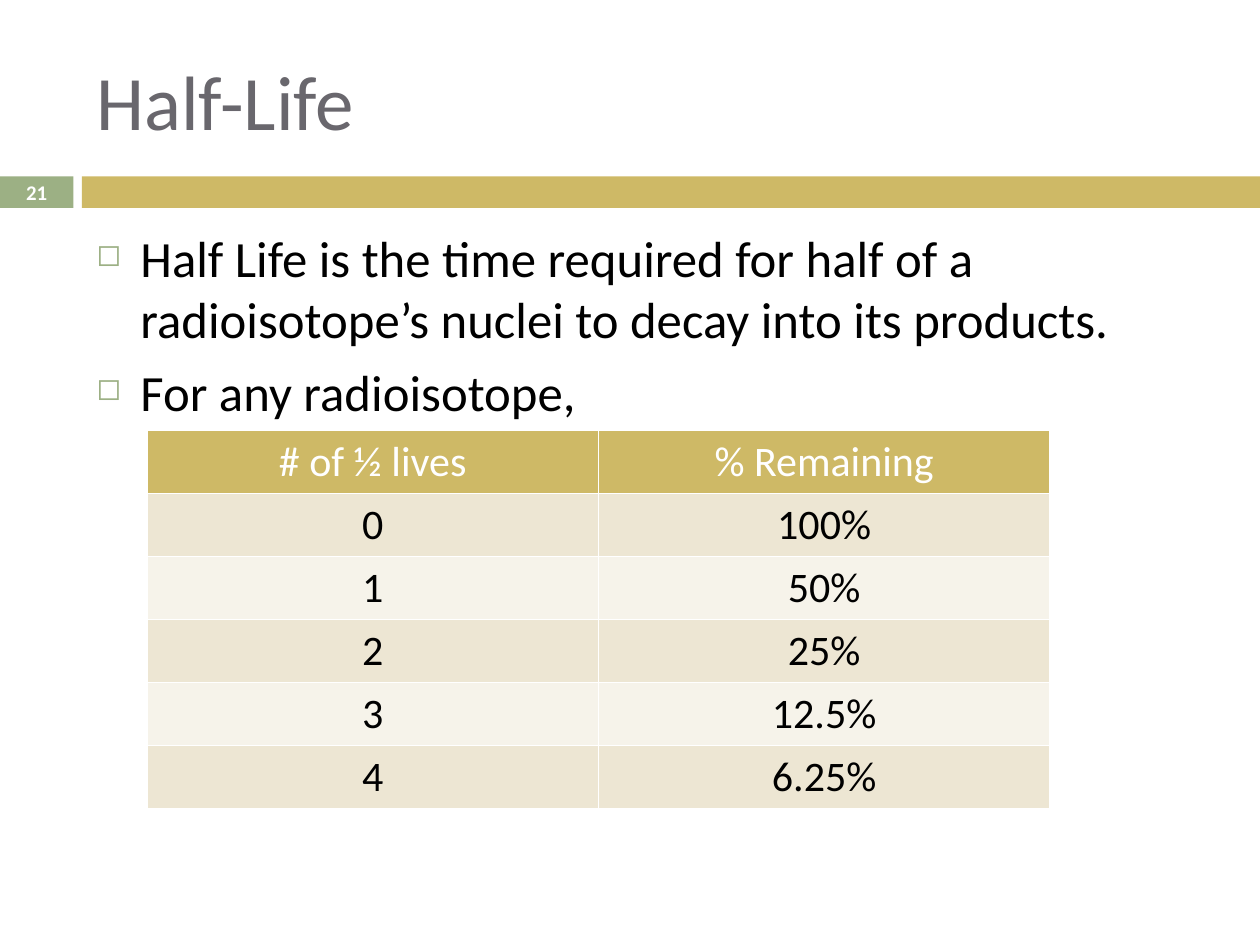
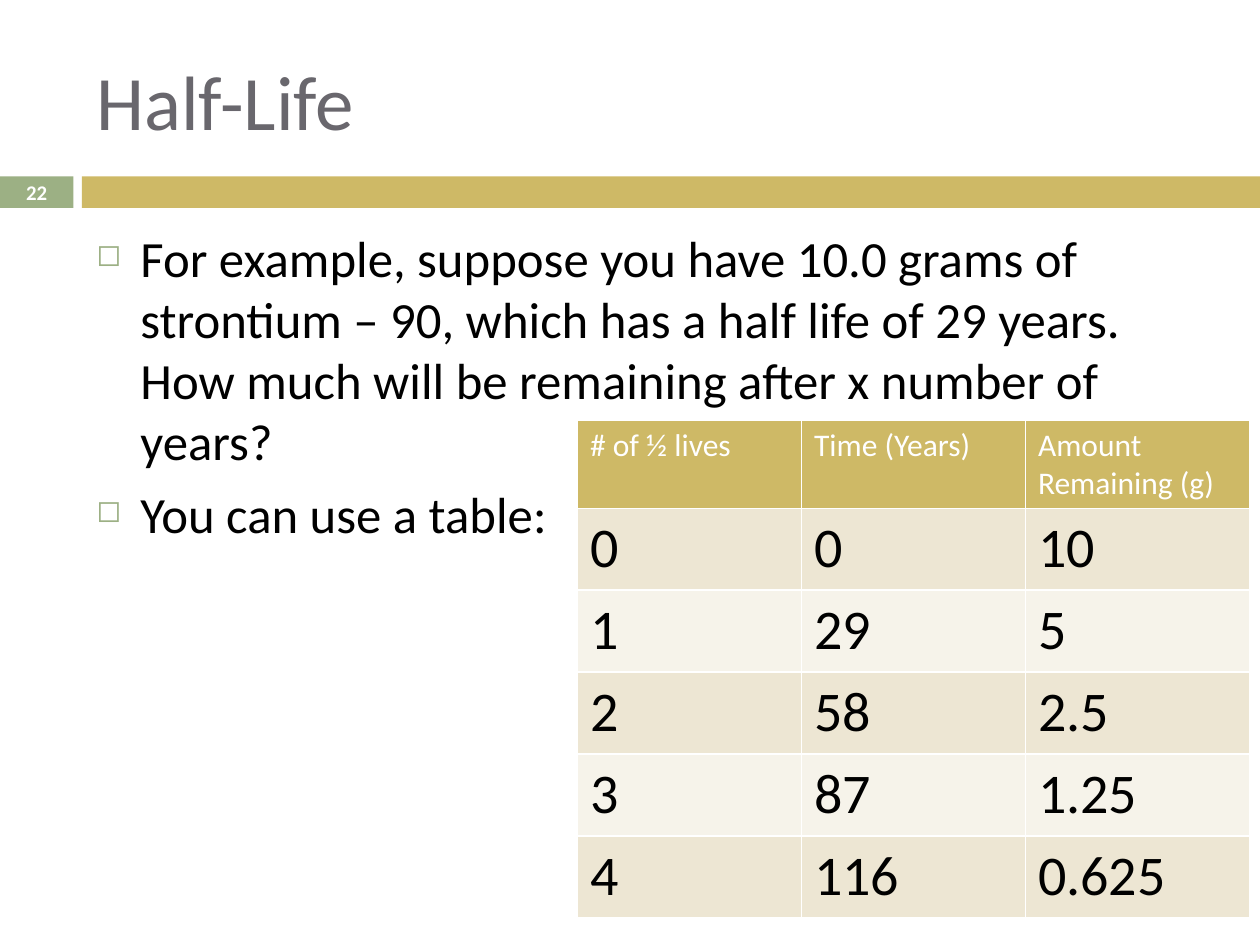
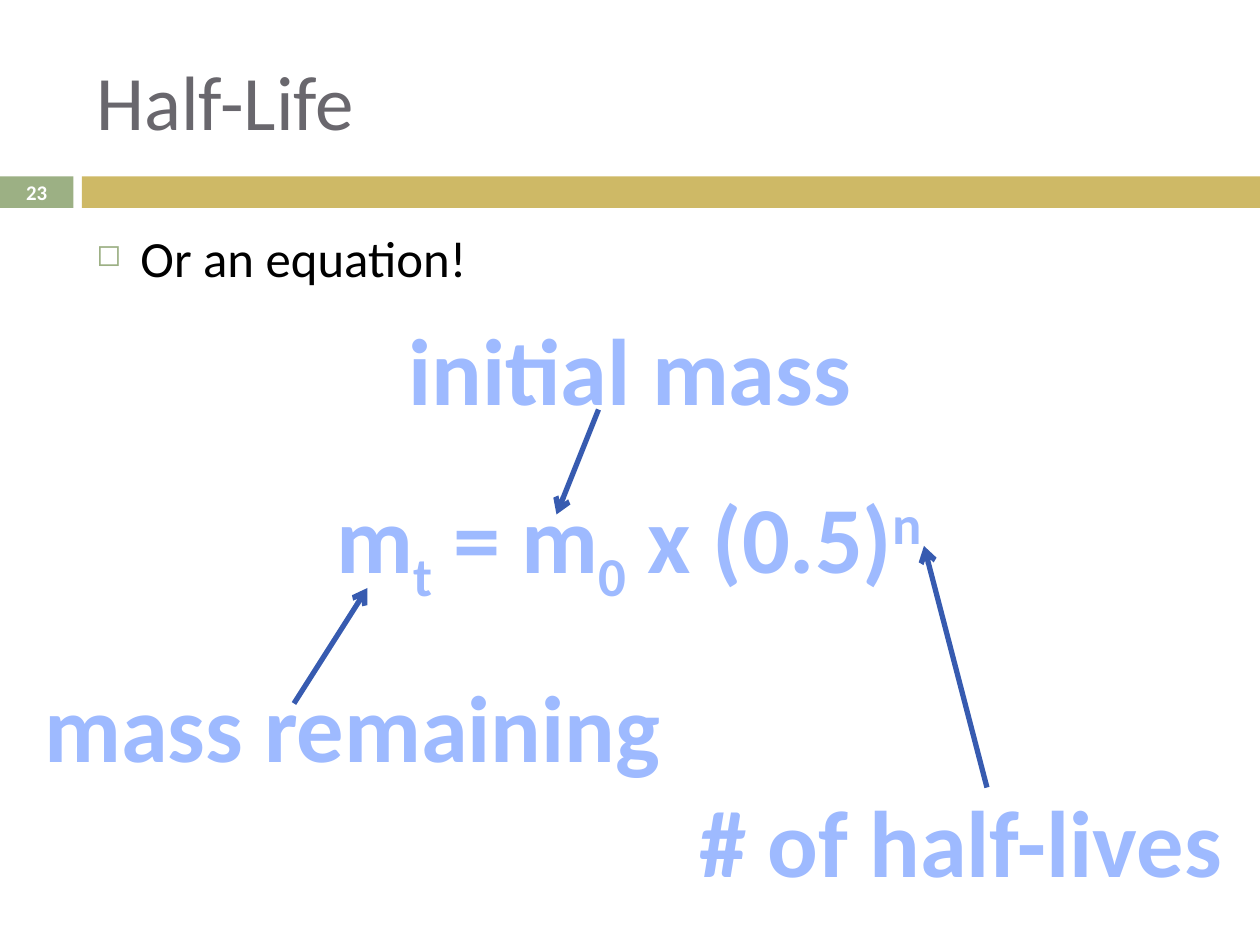
"""Builds three slides on half-life: a rule, a worked table and an equation."""
from dataclasses import dataclass

from lxml.etree import SubElement
from pptx import Presentation
from pptx.dml.color import RGBColor
from pptx.enum.shapes import MSO_CONNECTOR as Conn, MSO_SHAPE as Shape
from pptx.enum.text import MSO_ANCHOR as Anchor, MSO_AUTO_SIZE as Fit, PP_ALIGN as Align
from pptx.oxml.ns import qn
from pptx.util import Pt


@dataclass(frozen=True)
class Theme:
    """Colours, font and type sizes of the deck."""
    font: str = "Calibri"
    white: str = "FFFFFF"
    black: str = "000000"
    title: str = "69676D"
    green: str = "9CB084"
    gold: str = "CEB966"
    bands: tuple = ("EDE6D3", "F6F3EA")
    formula: str = "9EBAFF"
    arrow: str = "375BB0"
    title_size: float = 44
    body_size: float = 29
    formula_size: float = 54
    number_size: float = 11.9


class Deck:
    """Holds the theme and the current slide, and draws each kind of element."""

    def __init__(self, theme):
        """Open an empty 10 by 7.5 inch presentation."""
        self.theme = theme
        self.prs = Presentation()
        self.prs.slide_width, self.prs.slide_height = Pt(720), Pt(540)

    def slide(self, title, number):
        """Start a slide with its bands, title and number."""
        t = self.theme
        self.s = self.prs.slides.add_slide(self.prs.slide_layouts[6])
        self.band(0, 42, t.green)
        self.band(46.8, 673.2, t.gold)
        tf = self.box(48, 18, 642, 78, Anchor.MIDDLE)
        self.run(tf.paragraphs[0], title, t.title_size, t.title)
        tf = self.box(0, 100, 42, 19.5, Anchor.MIDDLE)
        p = tf.paragraphs[0]
        p.alignment = Align.CENTER
        self.run(p, str(number), t.number_size, t.white, bold=True)

    def band(self, x, w, color):
        """Draw one part of the strip under the title."""
        sp = self.s.shapes.add_shape(Shape.RECTANGLE, Pt(x), Pt(100.8), Pt(w), Pt(18))
        sp.shadow.inherit = False
        sp.fill.solid()
        sp.fill.fore_color.rgb = RGBColor.from_string(color)
        sp.line.fill.background()

    def box(self, x, y, w, h, anchor=Anchor.TOP, wrap=True):
        """Add a text box and return its text frame."""
        tf = self.s.shapes.add_textbox(Pt(x), Pt(y), Pt(w), Pt(h)).text_frame
        tf.word_wrap = wrap
        tf.vertical_anchor = anchor
        return tf

    def run(self, p, text, size, color, bold=False, baseline=0):
        """Add a run; baseline is a percentage, negative for subscript."""
        r = p.add_run()
        r.text = text
        f = r.font
        f.name, f.size, f.bold = self.theme.font, Pt(size), bold
        f.color.rgb = RGBColor.from_string(color)
        if baseline:
            r._r.get_or_add_rPr().set("baseline", str(baseline * 1000))

    def bullets(self, *items):
        """Write the body list with hollow square bullets."""
        t = self.theme
        tf = self.box(48, 126, 642, 354)
        for i, item in enumerate(items):
            p = tf.add_paragraph() if i else tf.paragraphs[0]
            p.space_before = Pt(7)
            pPr = p._p.get_or_add_pPr()
            pPr.set("marL", str(Pt(25.2)))
            pPr.set("indent", str(-Pt(25.2)))
            SubElement(SubElement(pPr, qn("a:buClr")), qn("a:srgbClr"), val=t.green)
            SubElement(pPr, qn("a:buSzPct"), val="60000")
            SubElement(pPr, qn("a:buChar"), char="◻")
            self.run(p, item, t.body_size, t.black)

    def table(self, x, y, w, row_h, rows, head_size, size, align):
        """Add a banded table with equal columns and a gold header."""
        t = self.theme
        n = len(rows[0])
        tbl = self.s.shapes.add_table(len(rows), n, Pt(x), Pt(y), Pt(w),
                                      Pt(row_h * len(rows))).table
        for col in tbl.columns:
            col.width = Pt(w / n)
        for i, row in enumerate(rows):
            tbl.rows[i].height = Pt(row_h)
            for j, text in enumerate(row):
                cell = tbl.cell(i, j)
                self.borders(cell)
                cell.fill.solid()
                fill = t.bands[(i - 1) % 2] if i else t.gold
                cell.fill.fore_color.rgb = RGBColor.from_string(fill)
                p = cell.text_frame.paragraphs[0]
                p.alignment = align
                self.run(p, text, size if i else head_size, t.black if i else t.white)

    def borders(self, cell):
        """Give a cell thin white borders."""
        tcPr = cell._tc.get_or_add_tcPr()
        for side in ("lnL", "lnR", "lnT", "lnB"):
            ln = SubElement(tcPr, qn(f"a:{side}"), w=str(Pt(1)))
            SubElement(SubElement(ln, qn("a:solidFill")), qn("a:srgbClr"),
                       val=self.theme.white)

    def formula(self, x, y, w, *parts):
        """Write large bold text from (text, baseline) parts."""
        t = self.theme
        tf = self.box(x, y, w, 72.7, wrap=False)
        tf.auto_size = Fit.SHAPE_TO_FIT_TEXT
        p = tf.paragraphs[0]
        p.alignment = Align.CENTER
        for text, baseline in parts:
            self.run(p, text, t.formula_size, t.formula, True, baseline)

    def arrow(self, x1, y1, x2, y2):
        """Draw an arrow from the first point to the second."""
        c = self.s.shapes.add_connector(Conn.STRAIGHT, Pt(x1), Pt(y1), Pt(x2), Pt(y2))
        c.line.width = Pt(3)
        c.line.color.rgb = RGBColor.from_string(self.theme.arrow)
        SubElement(c.line._get_or_add_ln(), qn("a:tailEnd"), type="arrow")
        SubElement(c._element.spPr, qn("a:effectLst"))


def main():
    """Build the slides and save them."""
    deck = Deck(Theme())
    title = "Half-Life"

    deck.slide(title, 21)
    deck.bullets("Half Life is the time required for half of a radioisotope’s nuclei "
                 "to decay into its products.", "For any radioisotope,")
    remaining = [("# of ½ lives", "% Remaining"), ("0", "100%"), ("1", "50%"),
                 ("2", "25%"), ("3", "12.5%"), ("4", "6.25%")]
    deck.table(84, 246, 516, 36, remaining, 24, 24, Align.CENTER)

    deck.slide(title, 22)
    deck.bullets("For example, suppose you have 10.0 grams of strontium – 90, which has "
                 "a half life of 29 years. How much will be remaining after x number "
                 "of years?", "You can use a table:")
    strontium = [("# of ½ lives", "Time (Years)", "Amount Remaining (g)"),
                 ("0", "0", "10"), ("1", "29", "5"), ("2", "58", "2.5"),
                 ("3", "87", "1.25"), ("4", "116", "0.625")]
    deck.table(330, 240, 384, 46.8, strontium, 18, 32, Align.LEFT)

    deck.slide(title, 23)
    deck.bullets("Or an equation!")
    deck.formula(168, 270, 383, ("m", 0), ("t", -25), (" = m", 0), ("0", -25),
                 (" x (0.5)", 0), ("n", 30))
    deck.formula(12, 378, 379, ("mass remaining", 0))
    deck.formula(222, 174, 276, ("initial mass", 0))
    deck.formula(378, 444, 342, ("# of half-lives", 0))
    deck.arrow(168, 402, 210, 336)
    deck.arrow(342, 234, 318, 294)
    deck.arrow(564, 450, 528, 312)

    deck.prs.save("out.pptx")


if __name__ == "__main__":
    main()
